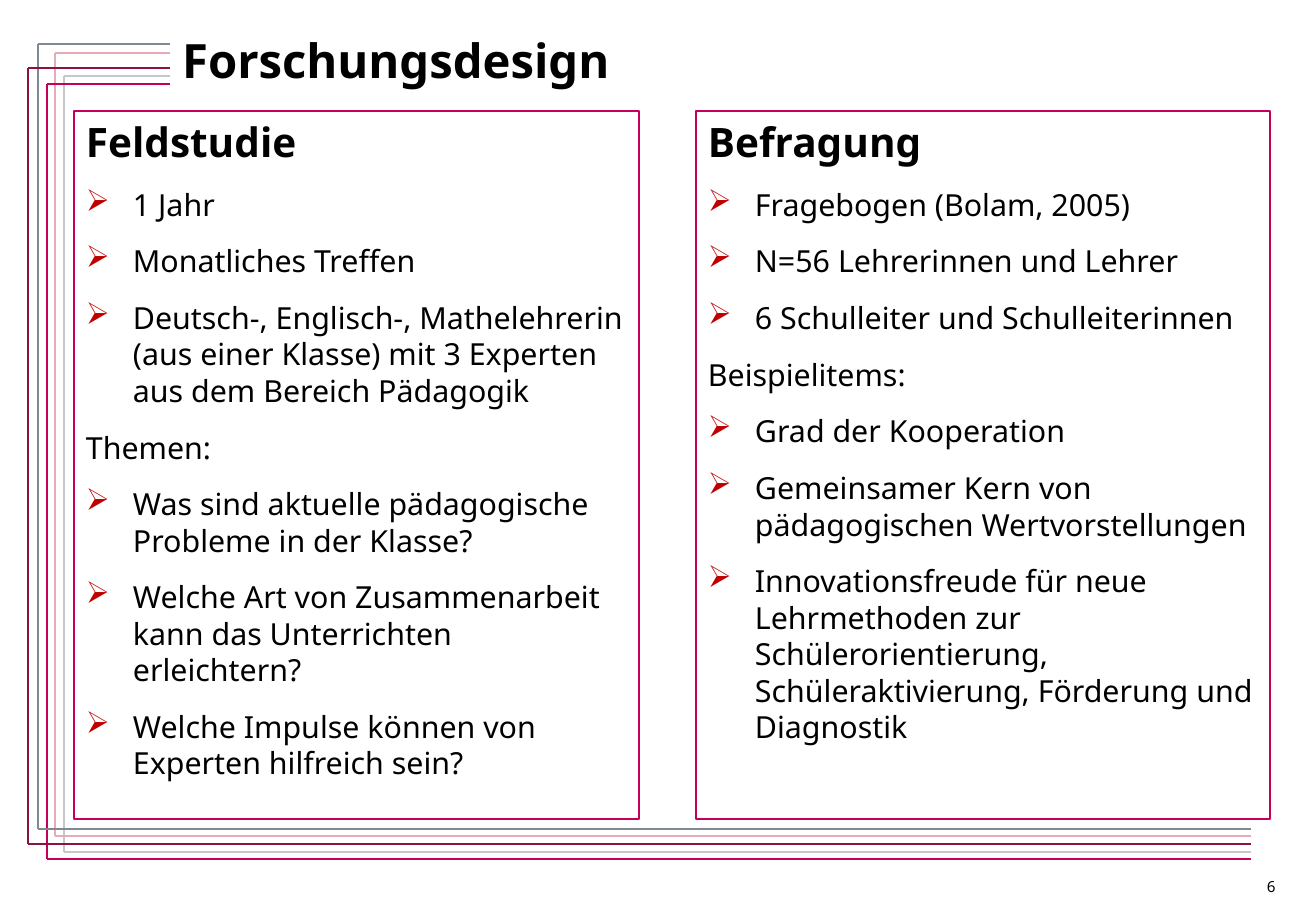
"""Build the research design slide with two framed columns and a line ornament."""
from dataclasses import dataclass

from lxml.etree import SubElement
from pptx import Presentation
from pptx.dml.color import RGBColor
from pptx.enum.shapes import MSO_CONNECTOR, MSO_SHAPE
from pptx.enum.text import MSO_ANCHOR, MSO_AUTO_SIZE, PP_ALIGN
from pptx.oxml.ns import qn
from pptx.util import Pt

TITLE = "Forschungsdesign"
PAGE_NUMBER = "6"
COLUMNS = [
    {
        "box": (74, 111, 565, 708),
        "heading": "Feldstudie",
        "facts": [
            "1 Jahr",
            "Monatliches Treffen",
            "Deutsch-, Englisch-, Mathelehrerin (aus einer Klasse) mit 3 Experten aus dem Bereich Pädagogik",
        ],
        "lead": "Themen:",
        "examples": [
            "Was sind aktuelle pädagogische Probleme in der Klasse?",
            "Welche Art von Zusammenarbeit kann das Unterrichten erleichtern?",
            "Welche Impulse können von Experten hilfreich sein?",
        ],
    },
    {
        "box": (696, 111, 574, 708),
        "heading": "Befragung",
        "facts": [
            "Fragebogen (Bolam, 2005)",
            "N=56 Lehrerinnen und Lehrer",
            "6 Schulleiter und Schulleiterinnen",
        ],
        "lead": "Beispielitems:",
        "examples": [
            "Grad der Kooperation",
            "Gemeinsamer Kern von pädagogischen Wertvorstellungen",
            "Innovationsfreude für neue Lehrmethoden zur Schülerorientierung, "
            "Schüleraktivierung, Förderung und Diagnostik",
        ],
    },
]
ORNAMENT = [
    ("808992", 38, 44, 829),
    ("E6ABB6", 55, 53, 836),
    ("8B1141", 28, 68, 844),
    ("C5C7C8", 64, 76, 852),
    ("C5005A", 47, 84, 859),
]
ORNAMENT_TOP_END, ORNAMENT_BOTTOM_END = 170, 1251
PAGE_SIZE = (1316, 911)
TITLE_BOX = (170, 29, 852, 114)
NUMBER_BOX = (1255, 871, 60, 24)
BULLET_INDENT = 47


@dataclass(frozen=True)
class Theme:
    """Colours, font and type sizes of the slide."""

    font: str = "Noto Sans"
    ink: str = "000000"
    frame: str = "C5005A"
    bullet: str = "C00000"
    title: int = 28
    heading: int = 24
    body: int = 18
    number: int = 9
    gap: int = 12


THEME = Theme()


def px(length):
    """Turn pixels into EMU."""
    return round(length * 914400 / 121.5)


def apply(target, values):
    """Set attributes from a dict."""
    for name, value in values.items():
        setattr(target, name, value)


def place(shape, box):
    """Position and size a shape given in pixels."""
    apply(shape, dict(zip(("left", "top", "width", "height"), map(px, box))))


def prepare(frame):
    """Give a text frame wrapping and a top anchor."""
    apply(frame, {"word_wrap": True, "auto_size": MSO_AUTO_SIZE.NONE,
                  "vertical_anchor": MSO_ANCHOR.TOP})


def write(para, text, size, bold=False, **layout):
    """Write one formatted run into a paragraph."""
    apply(para, {"alignment": PP_ALIGN.LEFT, **layout})
    span = para.add_run()
    span.text = text
    apply(span.font, {"name": THEME.font, "size": Pt(size), "bold": bold})
    span.font.color.rgb = RGBColor.from_string(THEME.ink)


def add_bullet(para):
    """Give a paragraph a coloured arrow bullet and a hanging indent."""
    properties = para._p.get_or_add_pPr()
    properties.set("marL", str(px(BULLET_INDENT)))
    properties.set("indent", str(-px(BULLET_INDENT)))
    colour = SubElement(properties, qn("a:buClr"))
    SubElement(colour, qn("a:srgbClr"), val=THEME.bullet)
    SubElement(properties, qn("a:buChar"), char="➢")


def add_line(page, colour, *ends):
    """Draw one ornament line."""
    line = page.shapes.add_connector(MSO_CONNECTOR.STRAIGHT, *map(px, ends))
    line.line.color.rgb = RGBColor.from_string(colour)
    line.line.width = Pt(1.25)
    SubElement(line._element.spPr, qn("a:effectLst"))


def add_ornament(page):
    """Draw the nested open frames, with the bottom lines on top."""
    for colour, left, top, bottom in ORNAMENT:
        add_line(page, colour, left, top, ORNAMENT_TOP_END, top)
        add_line(page, colour, left, top, left, bottom)
    for colour, left, _, bottom in ORNAMENT:
        add_line(page, colour, left, bottom, ORNAMENT_BOTTOM_END, bottom)


def add_column(page, column):
    """Draw one framed column with its heading and lists."""
    box = page.shapes.add_shape(MSO_SHAPE.RECTANGLE, *map(px, column["box"]))
    box.shadow.inherit = False
    box.fill.background()
    box.line.color.rgb = RGBColor.from_string(THEME.frame)
    box.line.width = Pt(0.75)
    frame = box.text_frame
    prepare(frame)
    gap = Pt(THEME.gap)
    write(frame.paragraphs[0], column["heading"], THEME.heading, True, space_after=gap)
    for text in [*column["facts"], column["lead"], *column["examples"]]:
        para = frame.add_paragraph()
        write(para, text, THEME.body, space_after=gap)
        if text != column["lead"]:
            add_bullet(para)


def main():
    """Assemble and save the slide."""
    deck = Presentation()
    deck.slide_width, deck.slide_height = map(px, PAGE_SIZE)
    page = deck.slides.add_slide(deck.slide_layouts[5])
    add_ornament(page)

    title = page.shapes.title
    place(title, TITLE_BOX)
    prepare(title.text_frame)
    write(title.text_frame.paragraphs[0], TITLE, THEME.title, True, line_spacing=0.95)

    for column in COLUMNS:
        add_column(page, column)

    number = page.shapes.add_textbox(*map(px, NUMBER_BOX))
    prepare(number.text_frame)
    write(number.text_frame.paragraphs[0], PAGE_NUMBER, THEME.number)

    deck.save("out.pptx")


if __name__ == "__main__":
    main()
